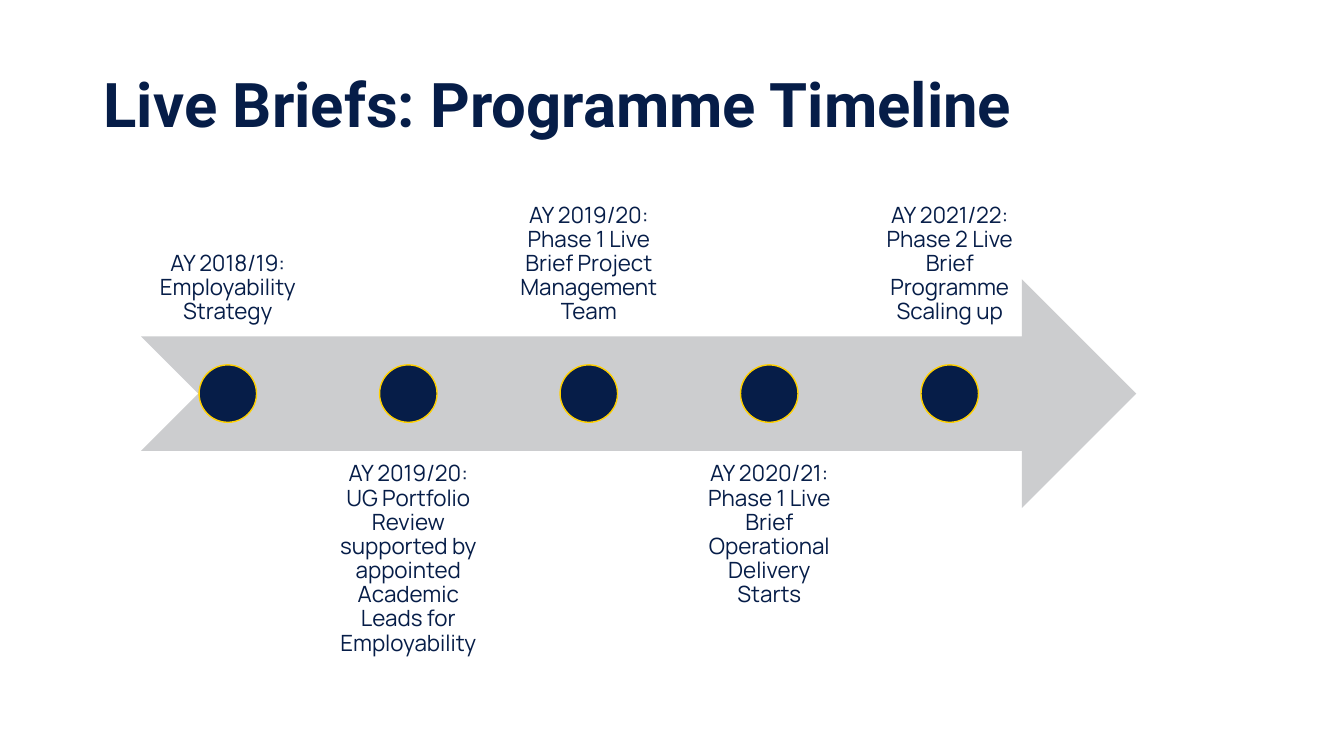
from dataclasses import dataclass

from pptx import Presentation
from pptx.dml.color import RGBColor
from pptx.enum.shapes import MSO_SHAPE as Preset
from pptx.enum.text import MSO_ANCHOR as Anchor, PP_ALIGN as Align
from pptx.shapes.autoshape import Shape
from pptx.slide import Slide
from pptx.util import Inches, Pt

COLORS = {"navy": "061D48", "gray": "CCCDCF", "yellow": "FFD000"}

ARROW_LEFT, ARROW_TOP, ARROW_WIDTH, ARROW_HEIGHT = 1.4, 2.77, 9.87, 2.27
FIRST_CENTER, STEP = 2.26, 1.79
LABEL_WIDTH, LABEL_HEIGHT = 1.71, 2.27
LABEL_TOP_ABOVE, LABEL_TOP_BELOW = 1.07, 4.47
LABEL_INSET = 0.12
DOT_SIZE, DOT_TOP = 0.57, 3.62


@dataclass(frozen=True)
class Milestone:
    year: str
    event: str


MILESTONES = [
    Milestone("AY 2018/19", "Employability Strategy"),
    Milestone("AY 2019/20", "UG Portfolio Review supported by appointed "
                            "Academic Leads for Employability"),
    Milestone("AY 2019/20", "Phase 1 Live Brief Project Management Team"),
    Milestone("AY 2020/21", "Phase 1 Live Brief Operational Delivery Starts"),
    Milestone("AY 2021/22", "Phase 2 Live Brief Programme Scaling up"),
]


def color(name: str) -> RGBColor:
    return RGBColor.from_string(COLORS[name])


def add_filled(slide: Slide, preset: Preset, left: float, top: float,
               width: float, height: float, fill: str) -> Shape:
    """Add a preset shape with a flat fill, no outline and no shadow."""
    shape = slide.shapes.add_shape(
        preset, Inches(left), Inches(top), Inches(width), Inches(height))
    shape.shadow.inherit = False
    shape.fill.solid()
    shape.fill.fore_color.rgb = color(fill)
    shape.line.fill.background()
    return shape


def add_text(slide: Slide, text: str, left: float, top: float, width: float,
             height: float, font: str, size: float, bold: bool = False,
             anchor: Anchor = Anchor.TOP, align: Align = Align.LEFT) -> Shape:
    box = slide.shapes.add_textbox(
        Inches(left), Inches(top), Inches(width), Inches(height))
    frame = box.text_frame
    frame.word_wrap = True
    frame.vertical_anchor = anchor
    paragraph = frame.paragraphs[0]
    paragraph.alignment = align
    paragraph.line_spacing = 0.9
    run = paragraph.add_run()
    run.text = text
    run.font.name = font
    run.font.size = Pt(size)
    run.font.bold = bold
    run.font.color.rgb = color("navy")
    return box


def add_milestone(slide: Slide, index: int, milestone: Milestone) -> None:
    """Draw the dot and its label, alternating above and below the arrow."""
    center = FIRST_CENTER + index * STEP
    above = index % 2 == 0
    label = add_text(
        slide, f"{milestone.year}: {milestone.event}",
        center - LABEL_WIDTH / 2,
        LABEL_TOP_ABOVE if above else LABEL_TOP_BELOW,
        LABEL_WIDTH, LABEL_HEIGHT, "Manrope", 16,
        anchor=Anchor.BOTTOM if above else Anchor.TOP, align=Align.CENTER)
    frame = label.text_frame
    frame.margin_left = frame.margin_right = Inches(LABEL_INSET)
    frame.margin_top = frame.margin_bottom = Inches(LABEL_INSET)

    dot = add_filled(slide, Preset.OVAL, center - DOT_SIZE / 2, DOT_TOP,
                     DOT_SIZE, DOT_SIZE, "navy")
    dot.line.color.rgb = color("yellow")
    dot.line.width = Pt(1)


def main() -> None:
    deck = Presentation()
    deck.slide_width, deck.slide_height = Inches(13.33), Inches(7.5)
    slide = deck.slides.add_slide(deck.slide_layouts[6])

    add_text(slide, "Live Briefs: Programme Timeline", 0.93, 0.34, 11.5, 1.45,
             "Roboto", 44, bold=True, anchor=Anchor.MIDDLE)
    add_filled(slide, Preset.NOTCHED_RIGHT_ARROW, ARROW_LEFT, ARROW_TOP,
               ARROW_WIDTH, ARROW_HEIGHT, "gray")
    for index, milestone in enumerate(MILESTONES):
        add_milestone(slide, index, milestone)

    deck.save("out.pptx")


if __name__ == "__main__":
    main()
